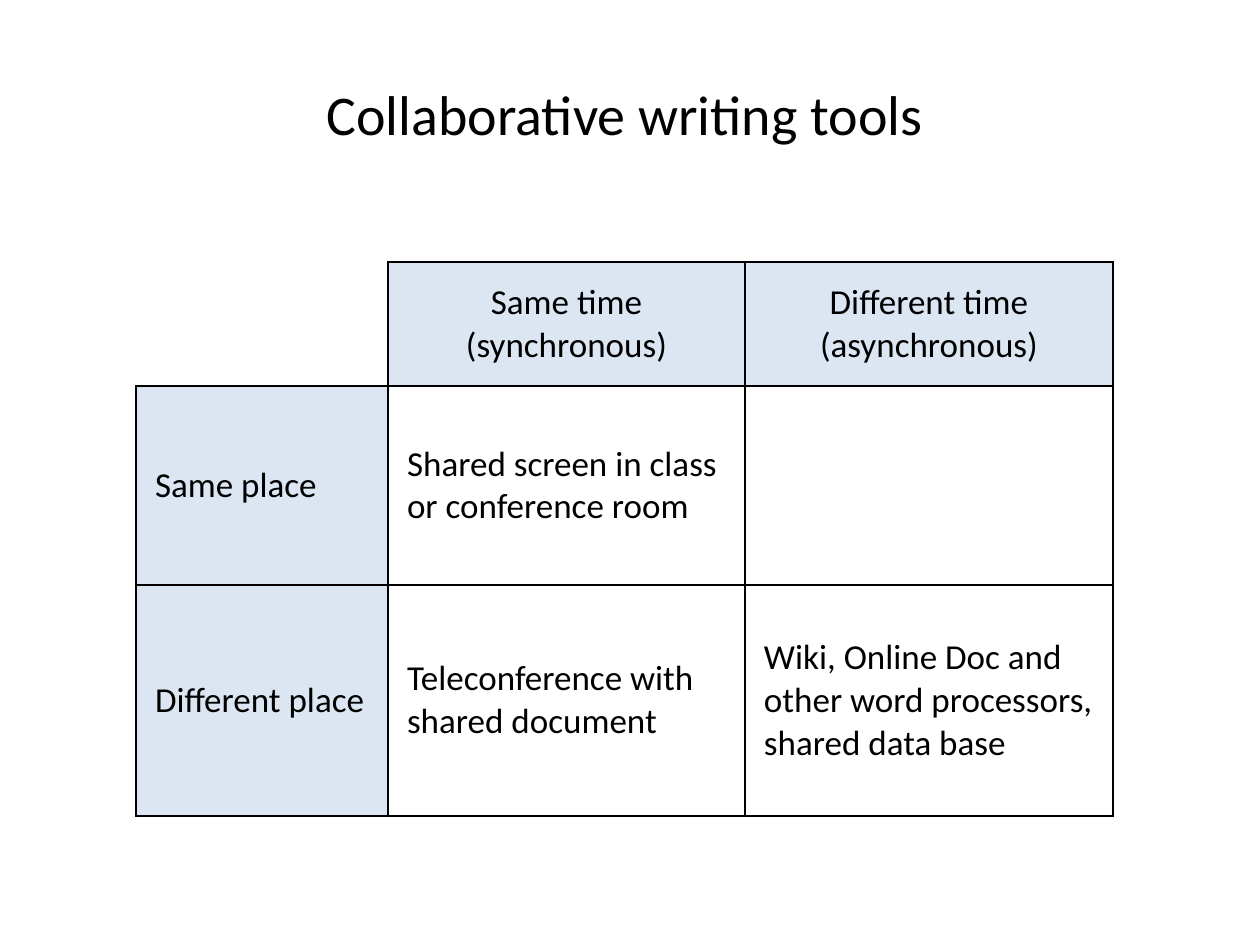
from lxml.etree import SubElement
from pptx import Presentation
from pptx.dml.color import RGBColor
from pptx.enum.text import MSO_ANCHOR, PP_ALIGN
from pptx.oxml.ns import qn
from pptx.util import Pt

PX = 914400 / 126
THEME = {
    "font": "Calibri",
    "ink": "000000",
    "header": "DCE6F2",
    "title_size": 32,
    "cell_size": 20,
    "border_width": 1,
}


def px(length):
    return round(length * PX)


def write(frame, lines, size, align):
    for index, line in enumerate(lines):
        para = frame.paragraphs[0] if index == 0 else frame.add_paragraph()
        para.alignment = align
        span = para.add_run()
        span.text = line
        for name, value in {"name": THEME["font"], "size": Pt(size)}.items():
            setattr(span.font, name, value)
        span.font.color.rgb = RGBColor.from_string(THEME["ink"])


deck = Presentation()
deck.slide_width, deck.slide_height = px(1260), px(945)
page = deck.slides.add_slide(deck.slide_layouts[6])

column_widths = [252, 357, 368]
row_heights = [124, 199, 231]
rows = [
    [[], ["Same time", "(synchronous)"], ["Different time", "(asynchronous)"]],
    [["Same place"], ["Shared screen in class or conference room"], []],
    [
        ["Different place"],
        ["Teleconference with shared document"],
        ["Wiki, Online Doc and other word processors, shared data base"],
    ],
]

table = page.shapes.add_table(
    len(rows), len(column_widths), px(136), px(262),
    px(sum(column_widths)), px(sum(row_heights)),
).table
table.first_row = table.horz_banding = False
for column, width in zip(table.columns, column_widths):
    column.width = px(width)
for row, height in zip(table.rows, row_heights):
    row.height = px(height)

cell_format = {
    "vertical_anchor": MSO_ANCHOR.MIDDLE,
    "margin_left": px(19),
    "margin_right": px(19),
    "margin_top": px(19),
    "margin_bottom": px(19),
}
for row_index, row in enumerate(rows):
    for column_index, lines in enumerate(row):
        cell = table.cell(row_index, column_index)
        corner = row_index == column_index == 0
        for name, value in cell_format.items():
            setattr(cell, name, value)

        properties = cell._tc.get_or_add_tcPr()
        for side in "LRTB":
            border = SubElement(properties, qn(f"a:ln{side}"), w=str(Pt(THEME["border_width"])))
            if corner and side in "LT":
                SubElement(border, qn("a:noFill"))
            else:
                paint = SubElement(border, qn("a:solidFill"))
                SubElement(paint, qn("a:srgbClr"), val=THEME["ink"])

        if not corner and 0 in (row_index, column_index):
            cell.fill.solid()
            cell.fill.fore_color.rgb = RGBColor.from_string(THEME["header"])
        else:
            cell.fill.background()
        align = PP_ALIGN.CENTER if row_index == 0 else PP_ALIGN.LEFT
        write(cell.text_frame, lines, THEME["cell_size"], align)

title = page.shapes.add_textbox(px(314), px(73), px(629), px(81))
title.text_frame.word_wrap = False
write(title.text_frame, ["Collaborative writing tools"], THEME["title_size"], PP_ALIGN.LEFT)

deck.save("out.pptx")
